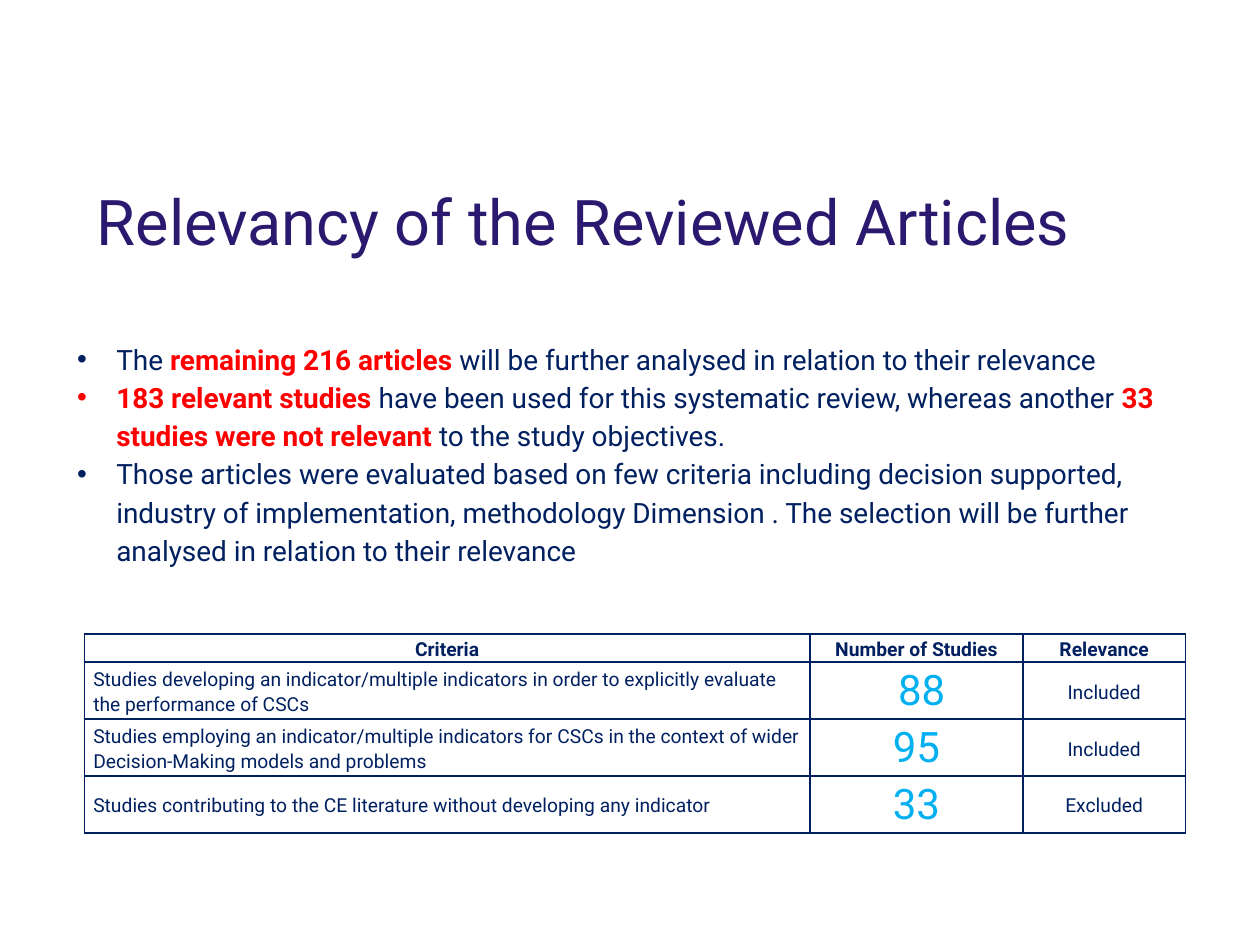
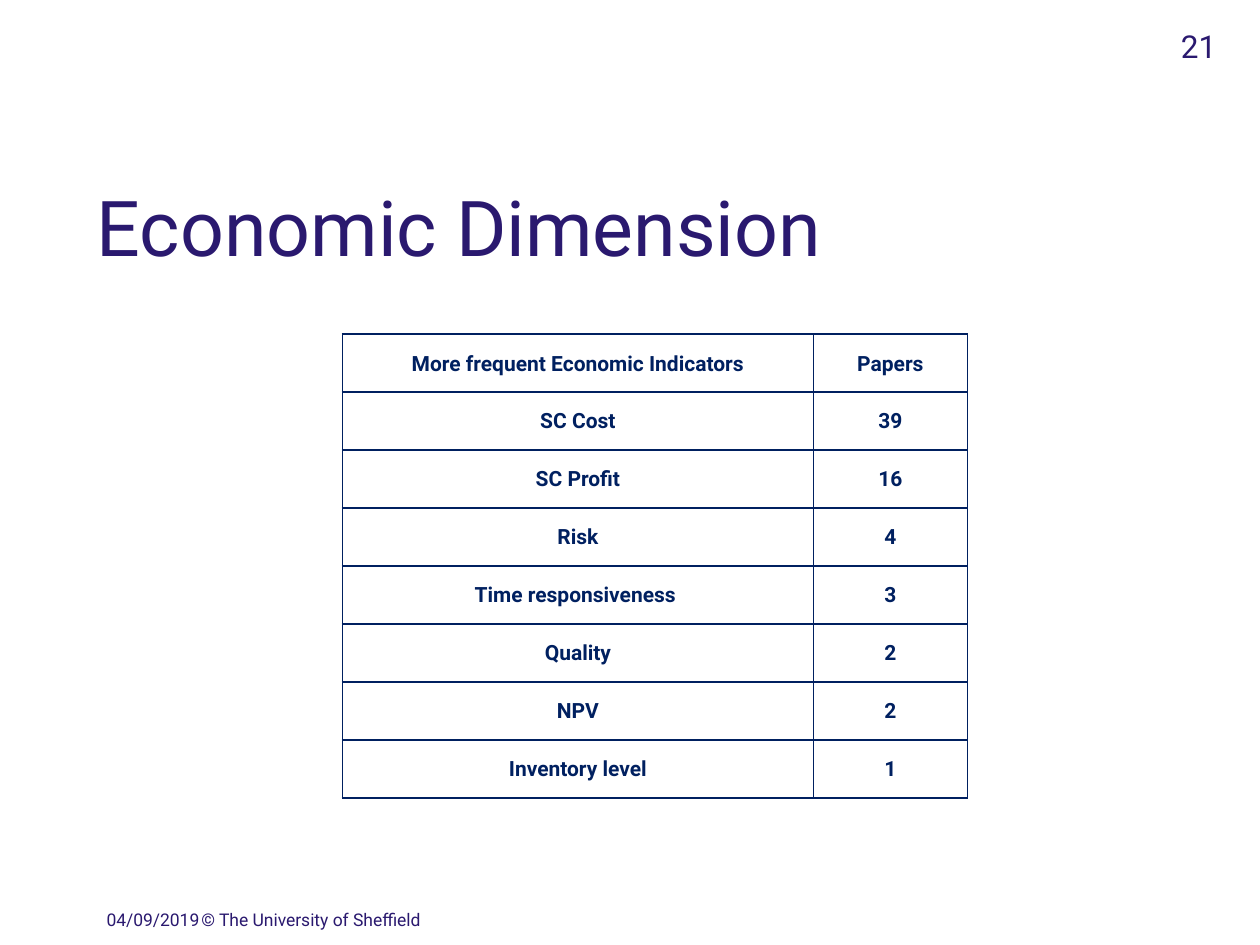
from lxml import etree
from pptx import Presentation
from pptx.dml.color import RGBColor
from pptx.enum.text import MSO_ANCHOR as Anchor, PP_ALIGN as Align
from pptx.oxml.ns import qn
from pptx.util import Cm, Pt

# Content
RELEVANCY_TITLE = "Relevancy of the Reviewed Articles"
# Each bullet is a list of (text, highlighted) runs
RELEVANCY_BULLETS = [
    [("The ", False), ("remaining 216 articles ", True),
     ("will be further analysed in relation to their relevance", False)],
    [("183 relevant studies ", True),
     ("have been used for this systematic review, whereas another ", False),
     ("33 studies were not relevant ", True),
     ("to the study objectives.", False)],
    [("Those articles were evaluated based on few criteria including decision "
      "supported, industry of implementation, methodology Dimension . The selection "
      "will be further analysed in relation to their relevance", False)],
]
CRITERIA_ROWS = [
    ("Criteria", "Number of Studies", "Relevance"),
    ("Studies developing an indicator/multiple indicators in order to explicitly "
     "evaluate the performance of CSCs", " 88", "Included"),
    ("Studies employing an indicator/multiple indicators for CSCs in the context of "
     "wider Decision-Making models and problems", "95", "Included"),
    ("Studies contributing to the CE literature without developing any indicator",
     "33", "Excluded"),
]
ECONOMIC_TITLE = "Economic Dimension"
ECONOMIC_ROWS = [
    ("More frequent Economic Indicators", "Papers"),
    ("SC Cost", "39"),
    ("SC Profit", "16"),
    ("Risk", "4"),
    ("Time responsiveness ", "3"),
    ("Quality", "2"),
    ("NPV", "2"),
    ("Inventory level", "1"),
]
# Text, box in cm, size, alignment
PAGE_MARKS = [
    ("04/09/2019", (1.9, 18.2, 2.54, 0.85), 10, Align.LEFT),
    ("© The University of Sheffield", (3.81, 18.2, 14.4, 0.85), 10, Align.LEFT),
    ("21", (19.47, 0.42, 5.3, 1.27), 18, Align.RIGHT),
]

# Shared style
FONT = "Roboto"
PURPLE, NAVY, RED, CYAN = "2A196F", "002060", "FF0000", "00B0F0"
TITLE_BOX = (1.7, 3.81, 22.86, 2.12)


def color(hex_value):
    return RGBColor.from_string(hex_value)


def add_run(paragraph, text, size, hex_value, bold=False):
    run = paragraph.add_run()
    run.text = text
    font = run.font
    font.name, font.size, font.bold = FONT, Pt(size), bold
    font.color.rgb = color(hex_value)


def place(shape, box):
    shape.left, shape.top, shape.width, shape.height = (Cm(length) for length in box)


def add_titled_slide(presentation, layout_index, title_text, size):
    slide = presentation.slides.add_slide(presentation.slide_layouts[layout_index])
    title = slide.shapes.title
    place(title, TITLE_BOX)
    title.text_frame.vertical_anchor = Anchor.TOP
    paragraph = title.text_frame.paragraphs[0]
    paragraph.alignment = Align.LEFT
    paragraph.line_spacing = 0.83
    add_run(paragraph, title_text, size, PURPLE)
    return slide


def fill_bullets(body, bullets):
    place(body, (1.3, 6.65, 22.6, 4.93))
    frame = body.text_frame
    frame.vertical_anchor = Anchor.MIDDLE
    for index, runs in enumerate(bullets):
        paragraph = frame.add_paragraph() if index else frame.paragraphs[0]
        paragraph.line_spacing = 1.14
        paragraph.space_before = paragraph.space_after = Pt(0)
        properties = paragraph._p.get_or_add_pPr()
        indent = Cm(0.79)
        properties.set("marL", str(indent))
        properties.set("indent", str(-indent))
        etree.SubElement(properties, qn("a:buFont"), typeface="Arial")
        etree.SubElement(properties, qn("a:buChar"), char="•")
        for text, highlighted in runs:
            add_run(paragraph, text, 16, RED if highlighted else NAVY, highlighted)


def add_borders(cell):
    properties = cell._tc.get_or_add_tcPr()
    for position, side in enumerate(("lnL", "lnR", "lnT", "lnB")):
        line = etree.Element(qn(f"a:{side}"), w=str(Pt(1)))
        fill = etree.SubElement(line, qn("a:solidFill"))
        etree.SubElement(fill, qn("a:srgbClr"), val=NAVY)
        properties.insert(position, line)


def add_grid(slide, rows, left, top, widths, heights, cell_style):
    """cell_style(row, column) gives alignment, size, colour, bold, spacing, side margin."""
    frame = slide.shapes.add_table(len(rows), len(widths), Cm(left), Cm(top),
                                   Cm(sum(widths)), Cm(sum(heights)))
    table = frame.table
    table.first_row = table.horz_banding = False
    for column, width in zip(table.columns, widths):
        column.width = Cm(width)
    for row_index, (values, height) in enumerate(zip(rows, heights)):
        table.rows[row_index].height = Cm(height)
        for column_index, text in enumerate(values):
            alignment, size, hex_value, bold, spacing, margin = cell_style(
                row_index, column_index)
            cell = table.cell(row_index, column_index)
            cell.fill.background()
            add_borders(cell)
            cell.vertical_anchor = Anchor.MIDDLE
            cell.margin_left = cell.margin_right = Cm(margin)
            cell.margin_top = cell.margin_bottom = 0
            paragraph = cell.text_frame.paragraphs[0]
            paragraph.alignment = alignment
            paragraph.line_spacing = spacing
            add_run(paragraph, text, size, hex_value, bold)


def criteria_style(row, column):
    if row and column == 1:
        return Align.CENTER, 24, CYAN, False, 1.0, 0.18
    alignment = Align.LEFT if row and column == 0 else Align.CENTER
    return alignment, 11, NAVY, row == 0, 1.15, 0.18


def economic_style(row, column):
    spacing, margin = (1.0, 0.03) if row else (1.15, 0.18)
    return Align.CENTER, 12, NAVY, True, spacing, margin


def add_page_marks(slide):
    for text, box, size, alignment in PAGE_MARKS:
        text_box = slide.shapes.add_textbox(*(Cm(length) for length in box))
        text_box.text_frame.word_wrap = True
        paragraph = text_box.text_frame.paragraphs[0]
        paragraph.alignment = alignment
        add_run(paragraph, text, size, PURPLE)


def main():
    presentation = Presentation()
    presentation.slide_width, presentation.slide_height = Cm(25.4), Cm(19.05)

    # Relevancy: bullets above the criteria table
    slide = add_titled_slide(presentation, 1, RELEVANCY_TITLE, 36)
    fill_bullets(slide.placeholders[1], RELEVANCY_BULLETS)
    add_grid(slide, CRITERIA_ROWS, 1.7, 12.78, (14.63, 4.29, 3.28),
             [0.57] + [1.15] * 3, criteria_style)

    # Economic dimension: indicator counts
    slide = add_titled_slide(presentation, 5, ECONOMIC_TITLE, 44)
    add_page_marks(slide)
    add_grid(slide, ECONOMIC_ROWS, 6.9, 6.73, (9.5, 3.1),
             [1.17] * len(ECONOMIC_ROWS), economic_style)

    presentation.save("out.pptx")


if __name__ == "__main__":
    main()
